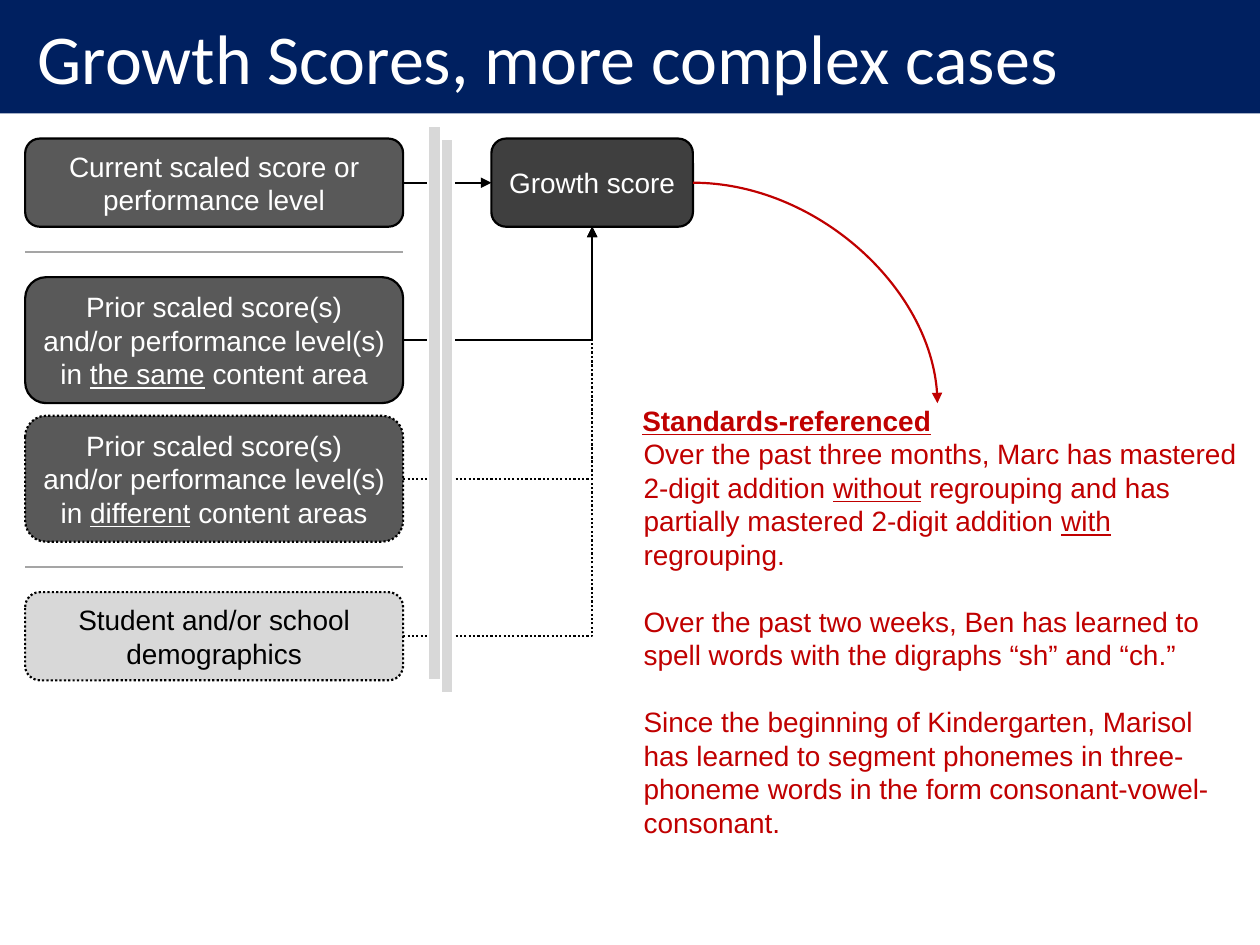
from dataclasses import dataclass

from lxml import etree
from pptx import Presentation
from pptx.dml.color import RGBColor
from pptx.enum.dml import MSO_LINE_DASH_STYLE as Dash
from pptx.enum.shapes import MSO_CONNECTOR_TYPE as Link, MSO_SHAPE as Shape
from pptx.enum.text import MSO_ANCHOR as Anchor, PP_ALIGN as Align
from pptx.oxml.ns import qn
from pptx.util import Inches, Pt

COLORS = {
    "navy": "002060",
    "dark": "595959",
    "darker": "3F3F3F",
    "light": "D8D8D8",
    "rule": "A5A5A5",
    "red": "C00000",
    "black": "000000",
    "white": "FFFFFF",
}
INPUT_LEFT, INPUT_WIDTH = 0.2, 3.0
INPUT_RIGHT = INPUT_LEFT + INPUT_WIDTH
SCORE_LEFT, SCORE_TOP, SCORE_WIDTH, SCORE_HEIGHT = 3.9, 1.1, 1.6, 0.7
SCORE_CENTER = SCORE_LEFT + SCORE_WIDTH / 2
SCORE_MIDDLE = SCORE_TOP + SCORE_HEIGHT / 2
SCORE_BOTTOM = SCORE_TOP + SCORE_HEIGHT


@dataclass
class Box:
    lines: list[str]
    left: float
    top: float
    width: float
    height: float
    fill: str = "dark"
    color: str = "white"
    dotted: bool = False

    @property
    def middle(self) -> float:
        return self.top + self.height / 2


CURRENT = Box(["Current scaled score or", "performance level"],
              INPUT_LEFT, 1.1, INPUT_WIDTH, 0.7)
SAME_AREA = Box(["Prior scaled score(s)", "and/or performance level(s)",
                 "in _the same_ content area"],
                INPUT_LEFT, 2.2, INPUT_WIDTH, 1)
OTHER_AREAS = Box(["Prior scaled score(s)", "and/or performance level(s)",
                   "in _different_ content areas"],
                  INPUT_LEFT, 3.3, INPUT_WIDTH, 1, dotted=True)
DEMOGRAPHICS = Box(["Student and/or school demographics"],
                   INPUT_LEFT, 4.7, INPUT_WIDTH, 0.7, "light", "black", True)
GROWTH = Box(["Growth score"], SCORE_LEFT, SCORE_TOP, SCORE_WIDTH,
             SCORE_HEIGHT, "darker")

EXAMPLES = [
    "Over the past three months, Marc has mastered 2-digit addition _without_ "
    "regrouping and has partially mastered 2-digit addition _with_ regrouping.",
    "Over the past two weeks, Ben has learned to spell words with the "
    "digraphs “sh” and “ch.”",
    "Since the beginning of Kindergarten, Marisol has learned to segment "
    "phonemes in three-phoneme words in the form consonant-vowel-consonant.",
]


def rgb(name: str) -> RGBColor:
    return RGBColor.from_string(COLORS[name])


def style_line(line, color: str, dotted: bool = False) -> None:
    line.color.rgb = rgb(color)
    line.width = Pt(1.25)
    if dotted:
        line.dash_style = Dash.ROUND_DOT


def add_text(p, text: str, *, color: str = "white", size: float = 16,
             font: str = "Arial", align=Align.LEFT, bold: bool = False,
             before: float = 0, indent: float = 0) -> None:
    p.alignment = align
    p.space_before = Pt(before)
    if indent:
        p._p.get_or_add_pPr().set("marL", str(Inches(indent)))
    for i, part in enumerate(text.split("_")):
        if part:
            r = p.add_run()
            r.text = part
            r.font.name, r.font.size = font, Pt(size)
            r.font.bold, r.font.underline = bold, i % 2 == 1
            r.font.color.rgb = rgb(color)


def add_shape(shapes, kind, left: float, top: float, width: float,
              height: float, fill: str | None = None, line: str | None = None,
              dotted: bool = False):
    s = shapes.add_shape(kind, Inches(left), Inches(top), Inches(width),
                         Inches(height))
    s.shadow.inherit = False
    if fill:
        s.fill.solid()
        s.fill.fore_color.rgb = rgb(fill)
    else:
        s.fill.background()
    if line:
        style_line(s.line, line, dotted)
    else:
        s.line.fill.background()
    return s


def set_frame(s, anchor, left: float = 0, top: float = 0, right: float = 0,
              bottom: float = 0):
    tf = s.text_frame
    tf.word_wrap = True
    tf.vertical_anchor = anchor
    tf.margin_left, tf.margin_top = Inches(left), Inches(top)
    tf.margin_right, tf.margin_bottom = Inches(right), Inches(bottom)
    return tf


def add_box(shapes, box: Box) -> None:
    s = add_shape(shapes, Shape.ROUNDED_RECTANGLE, box.left, box.top,
                  box.width, box.height, box.fill, "black", box.dotted)
    tf = set_frame(s, Anchor.MIDDLE)
    for i, text in enumerate(box.lines):
        p = tf.add_paragraph() if i else tf.paragraphs[0]
        add_text(p, text, color=box.color, align=Align.CENTER)


def add_line(shapes, x1: float, y1: float, x2: float, y2: float,
             color: str = "black", kind=Link.STRAIGHT, preset: str = "line",
             dotted: bool = False, arrow: bool = True):
    c = shapes.add_connector(kind, Inches(x1), Inches(y1), Inches(x2),
                             Inches(y2))
    style_line(c.line, color, dotted)
    sp_pr = c._element.spPr
    sp_pr.find(qn("a:prstGeom")).set("prst", preset)
    if arrow:
        etree.SubElement(c.line._get_or_add_ln(), qn("a:tailEnd"),
                         type="triangle")
    etree.SubElement(sp_pr, qn("a:effectLst"))
    return c


def add_elbow(shapes, box: Box) -> None:
    c = add_line(shapes, INPUT_RIGHT, box.middle, SCORE_CENTER, SCORE_BOTTOM,
                 kind=Link.ELBOW, preset="bentConnector2", dotted=box.dotted)
    xfrm = c._element.spPr.find(qn("a:xfrm"))
    xfrm.attrib.pop("flipV", None)
    xfrm.set("rot", "10800000")
    xfrm.set("flipH", "1")


def add_title(shapes) -> None:
    s = add_shape(shapes, Shape.RECTANGLE, 0, 0, 10, 0.9, "navy")
    tf = set_frame(s, Anchor.MIDDLE, 0.3, 0.05, 0.1, 0.05)
    add_text(tf.paragraphs[0], "Growth Scores, more complex cases", size=40,
             font="Calibri")


def add_examples(shapes) -> None:
    s = add_shape(shapes, Shape.FLOWCHART_PROCESS, 5, 3.2, 4.87, 3.64)
    tf = set_frame(s, Anchor.TOP, left=0.1)
    add_text(tf.paragraphs[0], "_Standards-referenced_", color="red",
             bold=True)
    for i, text in enumerate(EXAMPLES):
        add_text(tf.add_paragraph(), text, color="red", indent=0.01,
                 before=19 if i else 0)


def main() -> None:
    prs = Presentation()
    prs.slide_width, prs.slide_height = Inches(10), Inches(7.5)
    shapes = prs.slides.add_slide(prs.slide_layouts[6]).shapes

    for box in (DEMOGRAPHICS, OTHER_AREAS, SAME_AREA):
        add_elbow(shapes, box)
    add_line(shapes, INPUT_RIGHT, SCORE_MIDDLE, SCORE_LEFT, SCORE_MIDDLE)
    for box in (CURRENT, SAME_AREA, OTHER_AREAS, DEMOGRAPHICS, GROWTH):
        add_box(shapes, box)
    add_title(shapes)
    for y in (2, 4.5):
        add_line(shapes, INPUT_LEFT, y, INPUT_RIGHT, y, "rule", arrow=False)

    bars = shapes.add_group_shape().shapes
    for left, top in ((3.4, 1), (3.5, 1.1)):
        add_shape(bars, Shape.FLOWCHART_PROCESS, left, top, 0.1, 4.4, "light",
                  "white")
    add_examples(shapes)
    add_line(shapes, SCORE_LEFT + SCORE_WIDTH, SCORE_MIDDLE, 7.44, 3.2, "red",
             Link.CURVE, "curvedConnector2")
    prs.save("out.pptx")


if __name__ == "__main__":
    main()
